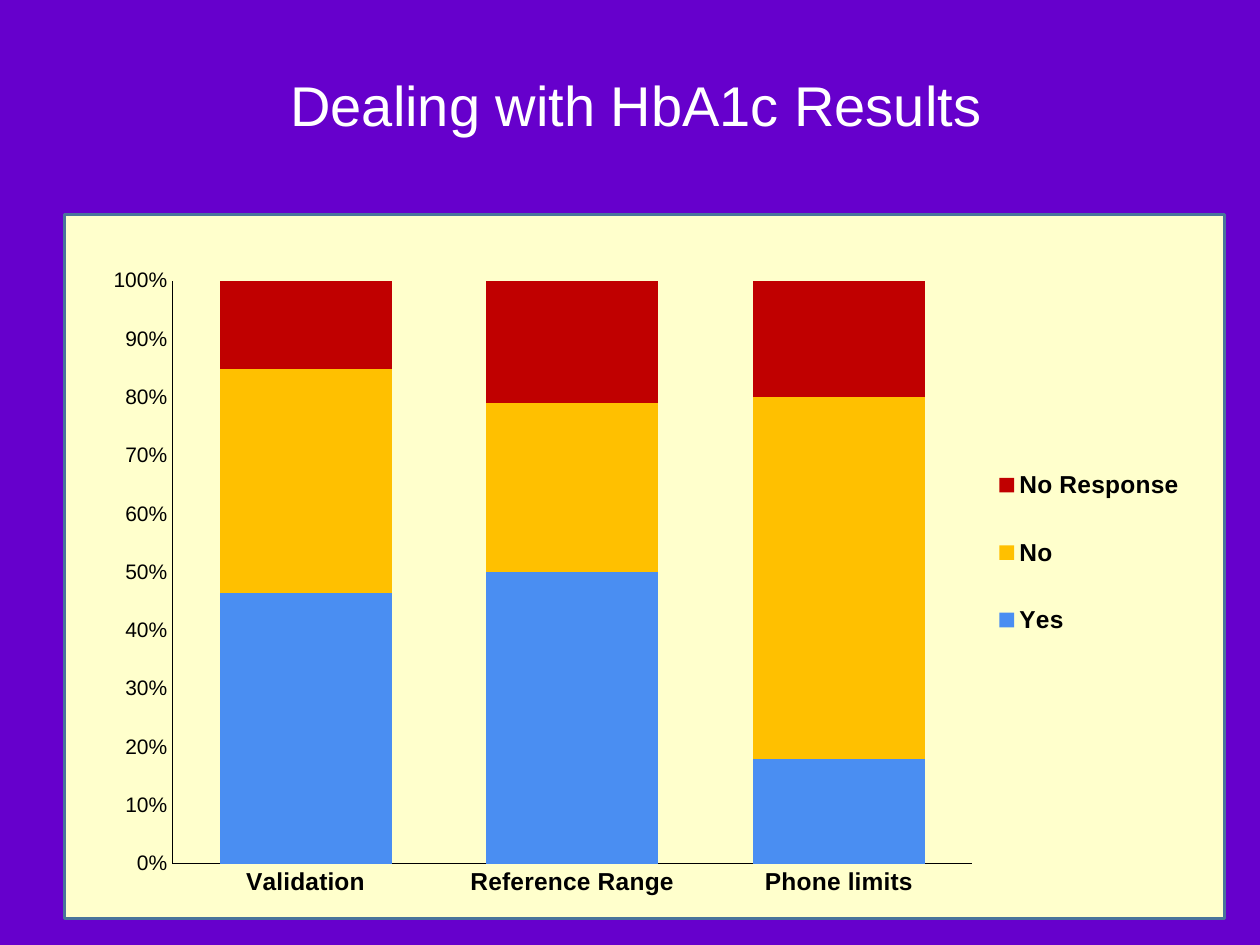
from pptx import Presentation
from pptx.chart.data import CategoryChartData
from pptx.dml.color import RGBColor
from pptx.enum.chart import XL_CHART_TYPE, XL_LEGEND_POSITION, XL_TICK_MARK
from pptx.enum.shapes import MSO_SHAPE
from pptx.enum.text import MSO_ANCHOR, PP_ALIGN
from pptx.oxml import parse_xml
from pptx.oxml.ns import nsdecls
from pptx.util import Inches, Pt

PURPLE = RGBColor(0x66, 0x00, 0xCC)
CREAM = RGBColor(0xFF, 0xFF, 0xCC)
STEEL = RGBColor(0x49, 0x74, 0x9B)
WHITE = RGBColor(0xFF, 0xFF, 0xFF)
BLACK = RGBColor(0x00, 0x00, 0x00)
BLUE = RGBColor(0x4A, 0x8E, 0xF2)
GOLD = RGBColor(0xFF, 0xC0, 0x00)
RED = RGBColor(0xC0, 0x00, 0x00)

deck = Presentation()
deck.slide_width, deck.slide_height = Inches(10), Inches(7.5)
wide, high = deck.slide_width, deck.slide_height
slide = deck.slides.add_slide(deck.slide_layouts[6])
slide.background.fill.solid()
slide.background.fill.fore_color.rgb = PURPLE


def style(font, size, color=BLACK, bold=False, text=None):
    """Format a font, or fill a paragraph with text and format it."""
    if text is not None:
        run = font.add_run()
        run.text = text
        font = run.font
    font.name, font.size, font.bold = "Arial", Pt(size), bold
    font.color.rgb = color


def layout(left, top, width, height, inner=False):
    """Manual chart layout, in shares of the chart's size."""
    target = '<c:layoutTarget val="inner"/>' if inner else ""
    modes = '<c:xMode val="edge"/><c:yMode val="edge"/>'
    sizes = "".join(f'<c:{key} val="{val}"/>' for key, val in
                    zip("xywh", (left, top, width, height)))
    return parse_xml(f'<c:layout {nsdecls("c")}><c:manualLayout>{target}'
                     f'{modes}{sizes}</c:manualLayout></c:layout>')


# Panel
panel = slide.shapes.add_shape(MSO_SHAPE.RECTANGLE, Inches(0.51), Inches(1.7),
                               Inches(9.21), Inches(5.59))
panel.shadow.inherit = False
panel.fill.solid()
panel.fill.fore_color.rgb = CREAM
panel.line.color.rgb = STEEL
panel.line.width = Pt(1.5)

# Chart data
data = CategoryChartData()
data.categories = ["Validation", "Reference Range", "Phone limits"]
rows = [("Yes", (46, 50, 18), BLUE),
        ("No", (38, 29, 62), GOLD),
        ("No Response", (15, 21, 20), RED)]
for name, vals, _ in rows:
    data.add_series(name, vals)
chart = slide.shapes.add_chart(
    XL_CHART_TYPE.COLUMN_STACKED_100, Inches(0.75), Inches(2.02),
    Inches(8.82), Inches(5.2), data).chart
chart.has_title = False
style(chart.font, 10)

# Bars
plot = chart.plots[0]
plot.gap_width, plot.overlap = 55, 100
plot.vary_by_categories = False
for bar, (_, _, color) in zip(plot.series, rows):
    bar.format.fill.solid()
    bar.format.fill.fore_color.rgb = color

# Axes
for axis, size, bold in ((chart.category_axis, 14, True),
                         (chart.value_axis, 12, False)):
    style(axis.tick_labels.font, size, bold=bold)
    axis.major_tick_mark = axis.minor_tick_mark = XL_TICK_MARK.NONE
    axis.has_major_gridlines = False
    axis.format.line.color.rgb = BLACK
    axis.format.line.width = Pt(0.75)
scale = chart.value_axis
scale.minimum_scale, scale.maximum_scale, scale.major_unit = 0, 1, 0.1
scale.tick_labels.number_format = "0%"
scale.tick_labels.number_format_is_linked = False

# Legend
chart.has_legend = True
legend = chart.legend
legend.position = XL_LEGEND_POSITION.RIGHT
legend.include_in_layout = False
style(legend.font, 14, bold=True)

# Places of plot and legend
area = chart._chartSpace.chart.plotArea
for old in area.xpath("c:layout"):
    area.remove(old)
area.insert(0, layout(0.07, 0.04, 0.72, 0.89, inner=True))
box = legend._element
for old in box.xpath("c:layout"):
    box.remove(old)
box.xpath("c:legendPos")[0].addnext(layout(0.8, 0.27, 0.19, 0.37))

# Title
title = slide.shapes.add_textbox(wide * 0.02, Inches(0.13),
                                 wide * 0.97, high * 0.2)
frame = title.text_frame
frame.word_wrap = True
frame.vertical_anchor = MSO_ANCHOR.BOTTOM
frame.margin_bottom = Inches(0.54)
frame.paragraphs[0].alignment = PP_ALIGN.CENTER
style(frame.paragraphs[0], 32, WHITE, text="Dealing with HbA1c Results")

deck.save("out.pptx")
